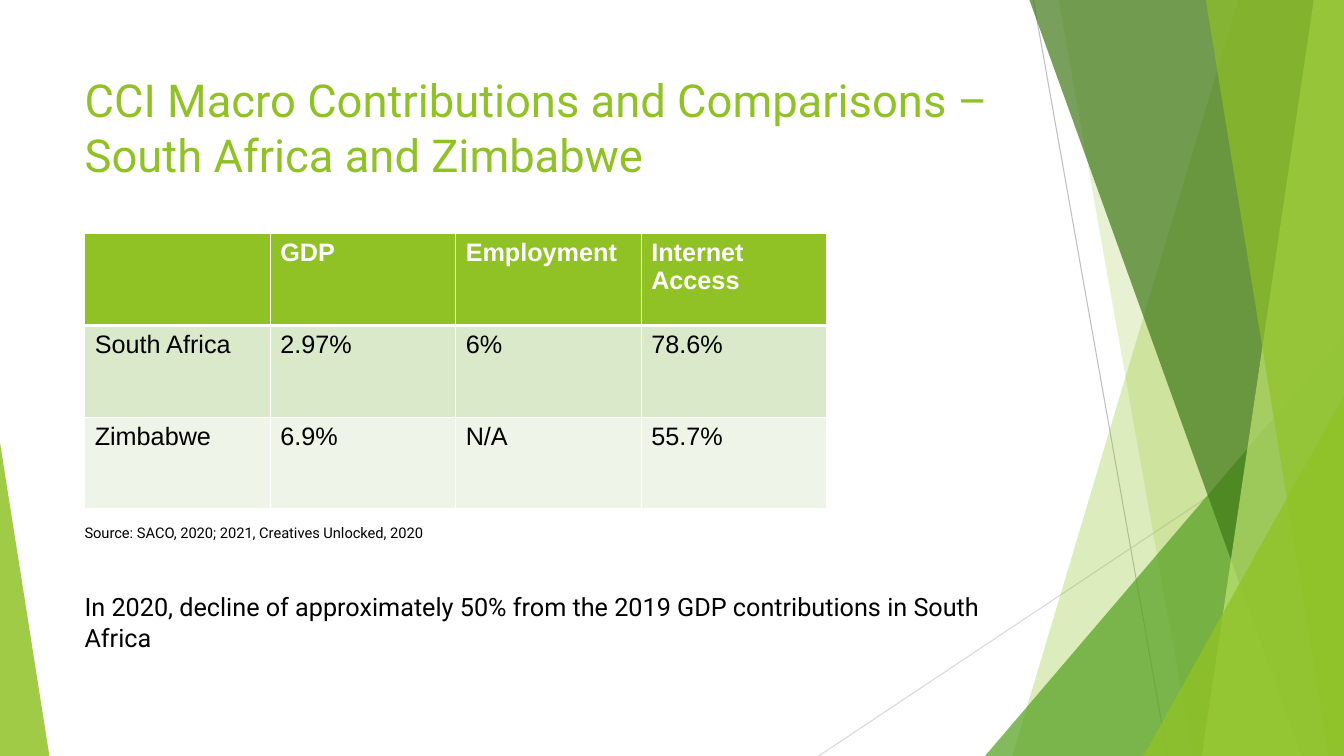
from dataclasses import dataclass
from pptx import Presentation, util as u
from pptx.dml.color import RGBColor
from pptx.enum import shapes, text
from pptx.oxml import parse_xml
from pptx.oxml.ns import nsdecls, qn
from lxml import etree


@dataclass(frozen=True)
class Theme:
    lime: str = "90C226"
    green: str = "54A021"
    dark: str = "3F7818"
    pale: str = "BFE471"
    band: str = "DBE9CB"
    light: str = "EEF4E7"
    white: str = "FFFFFF"
    black: str = "000000"
    gray: str = "BFBFBF"
    mist: str = "D8D8D8"
    face: str = "Roboto"
    grid: str = "Arial"
    head: float = 32.4
    body: float = 18
    note: float = 10.5


T = Theme()
W, H = 13.33, 7.5
LEFT = 0.74
ROWS = [
    ["", "GDP", "Employment", "Internet Access"],
    ["South Africa", "2.97%", "6%", "78.6%"],
    ["Zimbabwe", "6.9%", "N/A", "55.7%"],
]


def rgb(code):
    return RGBColor.from_string(code)


def inches(*vals):
    return [u.Inches(v) for v in vals]


def apply(item, form):
    for key, val in form.items():
        setattr(item, key, val)


def write(frame, words, size, color, face=T.face, bold=False):
    apply(frame, dict(word_wrap=True, auto_size=text.MSO_AUTO_SIZE.NONE,
                      vertical_anchor=text.MSO_ANCHOR.TOP))
    par = frame.paragraphs[0]
    par.alignment = text.PP_ALIGN.LEFT
    run = par.add_run()
    run.text = words
    apply(run.font, dict(size=u.Pt(size), name=face, bold=bold))
    run.font.color.rgb = rgb(color)


def tint(shape, color, share):
    """Fill a shape with a colour at the given percentage of opacity."""
    shape.shadow.inherit = False
    shape.line.fill.background()
    shape.fill.solid()
    shape.fill.fore_color.rgb = rgb(color)
    clr = shape.fill._xPr.find(qn("a:solidFill"))[0]
    etree.SubElement(clr, qn("a:alpha"), val=str(share * 1000))


def ray(slide, start, end, color):
    line = slide.shapes.add_connector(
        shapes.MSO_CONNECTOR.STRAIGHT, *inches(*start, *end))
    line.line.color.rgb = rgb(color)
    line.line.width = u.Pt(0.75)
    etree.SubElement(line._element.spPr, qn("a:effectLst"))


def blade(slide, top, foot, color, share):
    """Full-height panel from a slanted left edge to the slide's right side."""
    pen = slide.shapes.build_freeform(*inches(top, 0))
    pen.add_line_segments([inches(*p) for p in ((W, 0), (W, H), (foot, H))])
    tint(pen.convert_to_shape(), color, share)


def wedge(slide, left, top, wide, apex, color, share):
    """Triangle that stands on the slide's bottom edge."""
    tri = slide.shapes.add_shape(shapes.MSO_SHAPE.ISOSCELES_TRIANGLE,
                                 *inches(left, top, wide, H - top))
    tri.adjustments[0] = apex
    tint(tri, color, share)


def decor(slide):
    ray(slide, (10.25, 0), (11.58, H), T.gray)
    ray(slide, (W, 4.03), (8.12, H), T.mist)
    blade(slide, 12.28, 10.04, T.lime, 30)
    blade(slide, 10.5, 11.83, T.lime, 20)
    wedge(slide, 9.77, 3.33, W - 9.77, 1, T.green, 72)
    blade(slide, 10.21, 12.91, T.dark, 70)
    blade(slide, 13.03, 11.92, T.pale, 70)
    blade(slide, 11.96, 13.18, T.lime, 65)
    wedge(slide, 11.34, 3.93, W - 11.34, 1, T.lime, 80)
    wedge(slide, 0, 4.39, 0.49, 0, T.lime, 85)


def title(slide, box, words):
    head = slide.shapes.title
    apply(head, dict(zip(("left", "top", "width", "height"), inches(*box))))
    write(head.text_frame, words, T.head, T.lime)


def label(slide, box, words, size):
    area = slide.shapes.add_textbox(*inches(*box))
    write(area.text_frame, words, size, T.black)


def edge(cell, row):
    """White cell borders, thick between the header and the body."""
    props = cell._tc.get_or_add_tcPr()
    wide = {"L": 1, "R": 1, "T": 3 if row == 1 else 1, "B": 3 if row == 0 else 1}
    for side, pts in wide.items():
        props.append(parse_xml(
            f'<a:ln{side} {nsdecls("a")} w="{u.Pt(pts)}"><a:solidFill>'
            f'<a:srgbClr val="{T.white}"/></a:solidFill></a:ln{side}>'))


def table(slide, box, rows):
    grid = slide.shapes.add_table(len(rows), len(rows[0]), *inches(*box)).table
    fills = (T.lime, T.band, T.light)
    for r, row in enumerate(rows):
        for c, words in enumerate(row):
            cell = grid.cell(r, c)
            edge(cell, r)
            cell.fill.solid()
            cell.fill.fore_color.rgb = rgb(fills[r])
            if words:
                write(cell.text_frame, words, T.body,
                      T.black if r else T.white, T.grid, r == 0)


def main():
    deck = Presentation()
    deck.slide_width, deck.slide_height = inches(W, H)
    slide = deck.slides.add_slide(deck.slide_layouts[5])
    decor(slide)
    title(slide, (LEFT, 0.67, 9.4, 1.44),
          "CCI Macro Contributions and Comparisons – South Africa and Zimbabwe")
    table(slide, (LEFT + 0.1, 2.32, 4 * 1.84, 3 * 0.91), ROWS)
    label(slide, (LEFT, 5.82, 9.19, 0.7),
          "In 2020, decline of approximately 50% from the 2019 GDP "
          "contributions in South Africa", T.body)
    label(slide, (LEFT, 5.15, 6.24, 0.29),
          "Source: SACO, 2020; 2021, Creatives Unlocked, 2020", T.note)
    deck.save("out.pptx")


if __name__ == "__main__":
    main()
